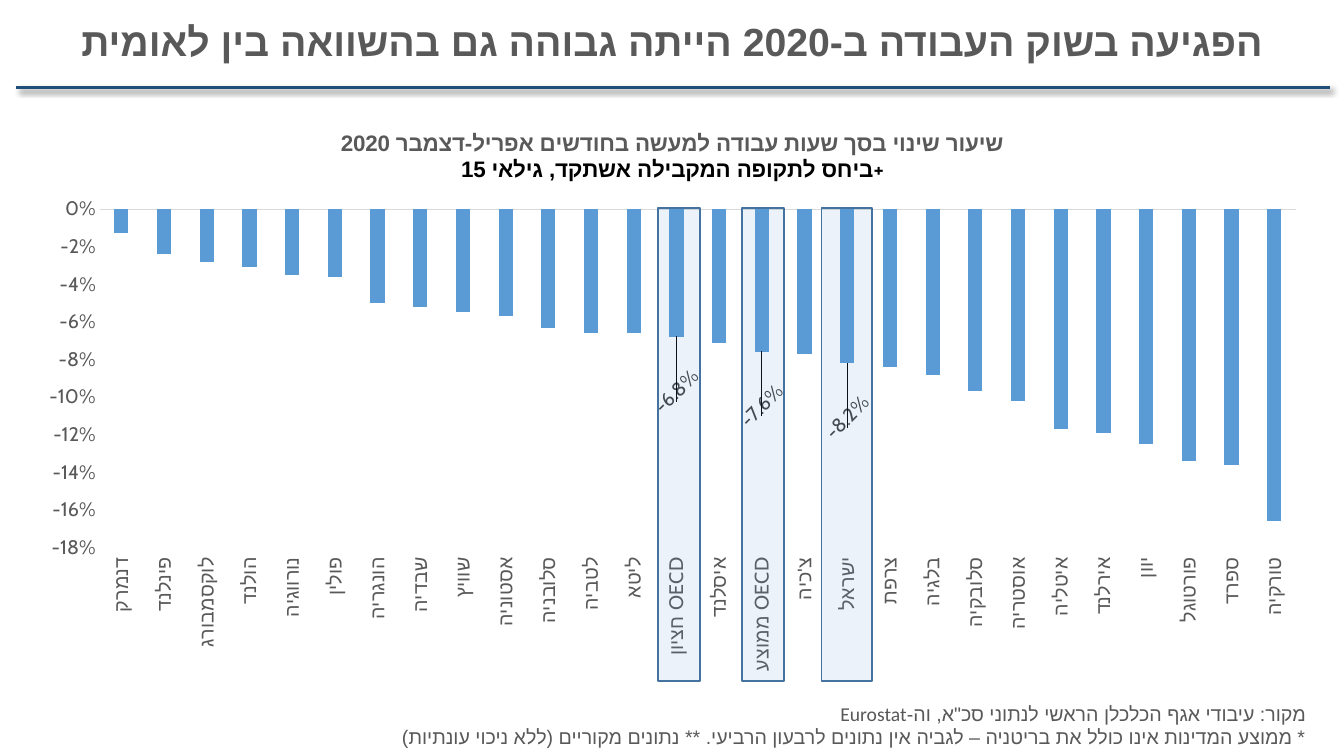
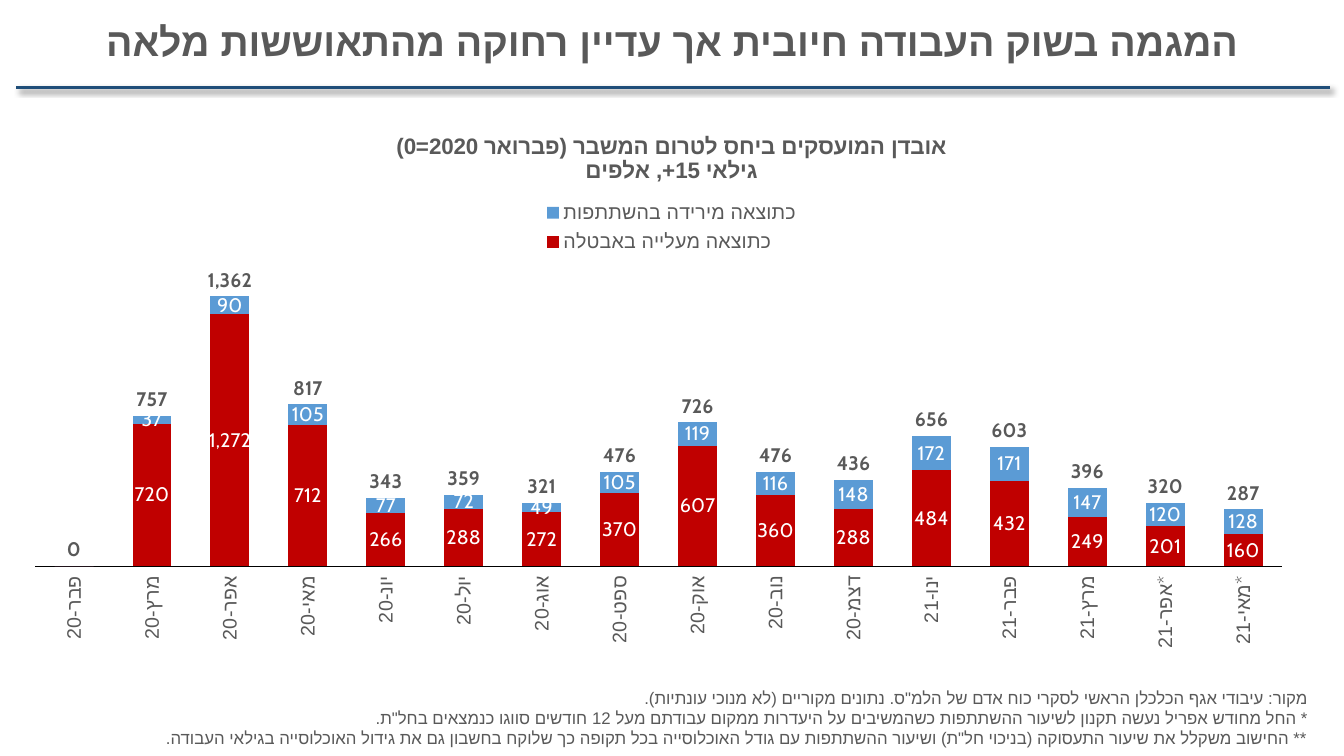
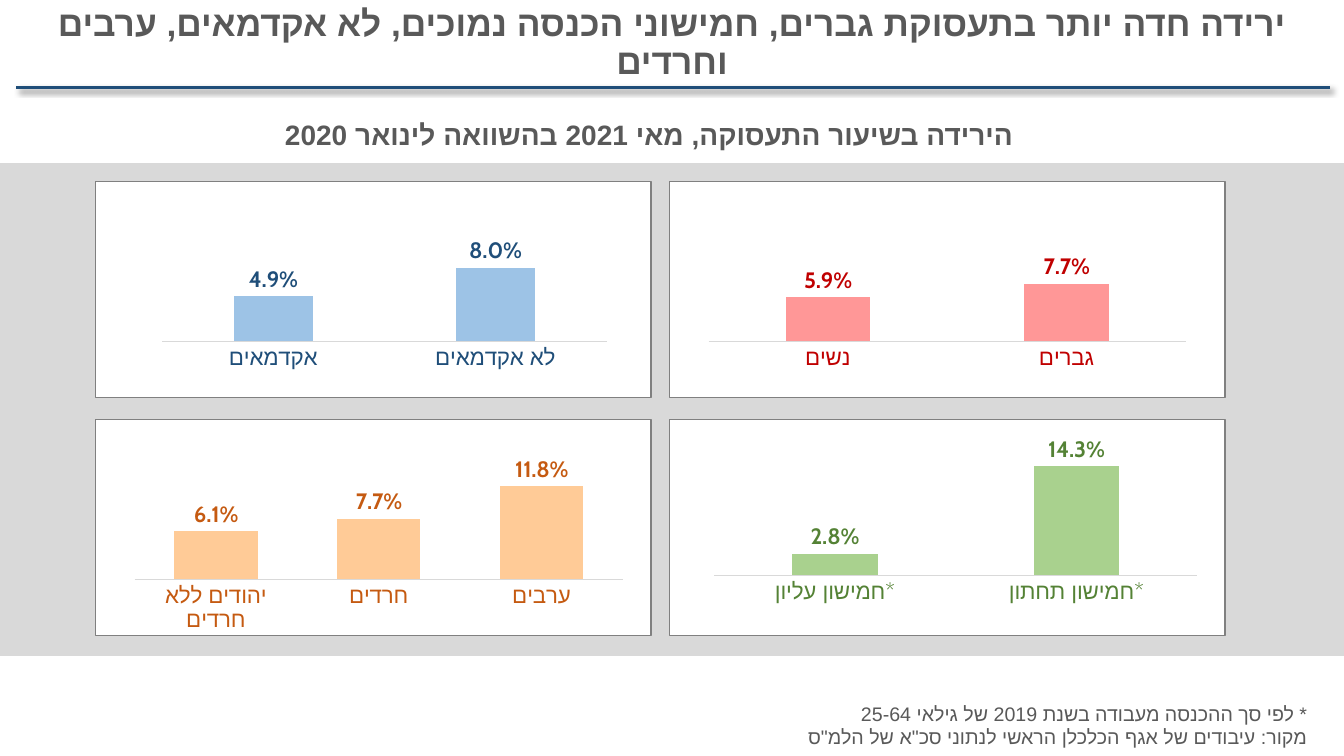
from copy import deepcopy

from lxml.etree import SubElement
from pptx import Presentation
from pptx.chart.data import CategoryChartData
from pptx.dml.color import RGBColor
from pptx.enum.chart import (XL_CHART_TYPE, XL_LABEL_POSITION, XL_LEGEND_POSITION,
                             XL_MARKER_STYLE, XL_TICK_LABEL_POSITION, XL_TICK_MARK)
from pptx.enum.shapes import MSO_CONNECTOR, MSO_SHAPE
from pptx.enum.text import MSO_ANCHOR, MSO_AUTO_SIZE, PP_ALIGN
from pptx.oxml import parse_xml
from pptx.oxml.ns import nsdecls, qn
from pptx.util import Pt

WIDE, HIGH = 960, 540
GREY, NAVY, BLUE, RED = "595959", "1F4E79", "5B9BD5", "C00000"
PALE, WHITE, BLACK = "D9D9D9", "FFFFFF", "000000"


def paint(text):
    """Turn a hex string into a colour."""
    return RGBColor.from_string(text)


def style(font, size, ink, bold=False, face="Cabin"):
    """Set size, colour, weight and faces of a font."""
    font.size, font.bold, font.name = Pt(size), bold, face
    font.color.rgb = paint(ink)
    SubElement(font._element, qn("a:cs")).set("typeface", "Arial")


def place(box):
    """Turn a box in points into lengths."""
    return [Pt(side) for side in box]


def write(frame, lines, size, align, **look):
    """Fill a text frame with right-to-left paragraphs."""
    frame.word_wrap = True
    frame.text = "\n".join(lines)
    for para in frame.paragraphs:
        para.alignment = align
        para._p.get_or_add_pPr().set("rtl", "1")
        for run in para.runs:
            style(run.font, size, GREY, **look)


def head(deck, text, size=28):
    """Add a slide with its rule and title."""
    slide = deck.slides.add_slide(deck.slide_layouts[5])
    rule = slide.shapes.add_connector(MSO_CONNECTOR.STRAIGHT, *place((949.7, 62.6, 11.5, 62.6)))
    rule.line.color.rgb, rule.line.width = paint(NAVY), Pt(2.25)
    rule._element.spPr.append(parse_xml(
        f'<a:effectLst {nsdecls("a")}><a:outerShdw blurRad="50800" dist="38100" dir="2700000" '
        f'algn="tl" rotWithShape="0"><a:srgbClr val="{BLACK}"><a:alpha val="40000"/></a:srgbClr>'
        '</a:outerShdw></a:effectLst>'))
    title = slide.shapes.title
    title.left, title.top, title.width, title.height = place((0, 0, WIDE, 62.6))
    frame = title.text_frame
    write(frame, [text], size, PP_ALIGN.CENTER, bold=True)
    frame.auto_size, frame.vertical_anchor = MSO_AUTO_SIZE.NONE, MSO_ANCHOR.MIDDLE
    frame.paragraphs[0].line_spacing = 0.9
    return slide


def label(slide, box, lines, size, align, **look):
    """Add a text box that grows with its text."""
    frame = slide.shapes.add_textbox(*place(box)).text_frame
    write(frame, lines, size, align, **look)
    frame.auto_size = MSO_AUTO_SIZE.SHAPE_TO_FIT_TEXT
    return frame


def note(slide, box, lines, size=14):
    """Add the source notes at the foot."""
    for para in label(slide, box, lines, size, PP_ALIGN.RIGHT, face="Calibri").paragraphs:
        para.level = 1
        para._p.pPr.set("marL", str(Pt(18)))
        para._p.pPr.set("indent", "0")


def block(slide, box, fill, line, alpha=None):
    """Add a plain rectangle, see-through if asked."""
    shape = slide.shapes.add_shape(MSO_SHAPE.RECTANGLE, *place(box))
    shape.shadow.inherit = False
    shape.fill.solid()
    shape.fill.fore_color.rgb = paint(fill)
    shape.line.color.rgb, shape.line.width = paint(line), Pt(1)
    if alpha:
        tint = shape._element.spPr.find(qn("a:solidFill"))[0]
        SubElement(tint, qn("a:alpha")).set("val", str(alpha * 1000))


def settle(node, spot, parts, inner=False):
    """Give a chart part a manual layout in fractions."""
    for old in node.findall(qn("c:layout")):
        node.remove(old)
    target = '<c:layoutTarget val="inner"/>' if inner else ""
    edges = '<c:xMode val="edge"/><c:yMode val="edge"/>' if len(parts) == 4 else ""
    sides = "".join(f'<c:{key} val="{part}"/>' for key, part in zip("xywh", parts))
    node.insert(spot, parse_xml(f'<c:layout {nsdecls("c")}><c:manualLayout>{target}{edges}{sides}'
                                '</c:manualLayout></c:layout>'))


def turn(node, angle):
    """Rotate the text of a chart part by degrees."""
    body = node.find(qn("c:txPr")).find(qn("a:bodyPr"))
    body.set("rot", str(angle * 60000))
    body.set("vert", "horz")


def graph(slide, box, cats, rows, kind, form, plot, gap, lap, scale, ink=GREY, size=14, line=PALE):
    """Add a column chart and set its plot and axes."""
    data = CategoryChartData(number_format=form)
    data.categories = cats
    for name, vals, _ in rows:
        data.add_series(name, vals)
    chart = slide.shapes.add_chart(kind, *place(box), data).chart
    style(chart.font, 14, BLACK)
    chart.has_title = chart.has_legend = False
    settle(chart._chartSpace.chart.plotArea, 0, plot, inner=True)
    bars = chart.plots[0]
    bars.gap_width, bars.overlap, bars.vary_by_categories = gap, lap, False
    for series, (_, _, fill) in zip(bars.series, rows):
        series.invert_if_negative = False
        series.format.fill.solid()
        series.format.fill.fore_color.rgb = paint(fill)
    cat, val = chart.category_axis, chart.value_axis
    for axis in (cat, val):
        axis.has_major_gridlines = False
        axis.major_tick_mark = axis.minor_tick_mark = XL_TICK_MARK.NONE
    cat.format.line.color.rgb, cat.format.line.width = paint(line), Pt(0.75)
    style(cat.tick_labels.font, size, ink)
    val.minimum_scale, val.maximum_scale = scale
    val.visible = False
    return chart


def name(chart, lines, inks, flow="0"):
    """Write the title of a chart."""
    frame = chart.chart_title.text_frame
    frame.text = "\n".join(lines)
    for para, ink in zip(frame.paragraphs, inks):
        para._p.get_or_add_pPr().set("rtl", flow)
        style(para.runs[0].font, 16, ink, True)


def tag(series, form, spot, size, ink, bold=False):
    """Show the values of a series."""
    labels = series.data_labels
    labels.show_value, labels.position = True, spot
    labels.number_format, labels.number_format_is_linked = form, False
    style(labels.font, size, ink, bold)
    return labels


def stand(chart):
    """Set the category names upright below the plot."""
    chart.category_axis.tick_label_position = XL_TICK_LABEL_POSITION.LOW
    turn(chart.category_axis._element, -90)


def lands(slide, box):
    """Chart the change in work hours by country."""
    left, top = box[:2]
    cats = ["דנמרק", "פינלנד", "לוקסמבורג", "הולנד", "נורווגיה", "פולין", "הונגריה", "שבדיה",
            "שוויץ", "אסטוניה", "סלובניה", "לטביה", "ליטא", "חציון OECD", "איסלנד", "ממוצע OECD",
            "צ'כיה", "ישראל", "צרפת", "בלגיה", "סלובקיה", "אוסטריה", "איטליה", "אירלנד", "יוון",
            "פורטוגל", "ספרד", "טורקיה"]
    vals = [-0.013, -0.024, -0.028, -0.031, -0.035, -0.036, -0.05, -0.052, -0.055, -0.057, -0.063,
            -0.066, -0.066, -0.068, -0.071, -0.076, -0.077, -0.082, -0.084, -0.088, -0.097, -0.102,
            -0.117, -0.119, -0.125, -0.134, -0.136, -0.166]
    chart = graph(slide, box, cats, [("שינוי", vals, BLUE)], XL_CHART_TYPE.COLUMN_CLUSTERED,
                  "0.0%", (0.05, 0.17, 0.94, 0.58), 200, -27, (-0.18, 0))
    name(chart, ["שיעור שינוי בסך שעות עבודה למעשה בחודשים אפריל-דצמבר 2020",
                 "ביחס לתקופה המקבילה אשתקד, גילאי 15+"], (GREY, BLACK))
    stand(chart)
    axis = chart.value_axis
    axis.visible, axis.major_unit = True, 0.02
    axis.format.line.fill.background()
    axis.tick_labels.number_format, axis.tick_labels.number_format_is_linked = "0%", False
    style(axis.tick_labels.font, 14, GREY)
    series = chart.plots[0].series[0]
    series.data_labels.show_value = False
    for spot in (13, 15, 17):
        mark = series.points[spot].data_label
        style(mark.font, 14, "404040")
        mark.position = XL_LABEL_POSITION.OUTSIDE_END
        node = mark._get_or_add_dLbl()
        turn(node, -45)
        settle(node, 1, (0, 0.04))
        node.insert(2, parse_xml(f'<c:numFmt {nsdecls("c")} formatCode="0.0%" sourceLinked="0"/>'))
    for shift, width in ((444, 30), (504, 30), (561, 36)):
        block(slide, (left + shift, top + 70, width, 338), BLUE, "43739E", 12)


def months(slide, box):
    """Chart the jobs lost by month, with totals above."""
    cats = ["פבר-20", "מרץ-20", "אפר-20", "מאי-20", "יונ-20", "יול-20", "אוג-20", "ספט-20",
            "אוק-20", "נוב-20", "דצמ-20", "ינו-21", "פבר-21", "מרץ-21", "אפר-21*", "מאי-21*"]
    rows = [("כתוצאה מעלייה באבטלה", [0, 720, 1272, 712, 266, 288, 272, 370, 607, 360, 288, 484,
                                       432, 249, 201, 160], RED),
            ("כתוצאה מירידה בהשתתפות", [0, 37, 90, 105, 77, 72, 49, 105, 119, 116, 148, 172,
                                         171, 147, 120, 128], BLUE),
            ("סך הכול", [0, 757, 1362, 817, 343, 359, 321, 476, 726, 476, 436, 656,
                         603, 396, 320, 287], "A5A5A5")]
    chart = graph(slide, box, cats, rows, XL_CHART_TYPE.COLUMN_STACKED, "#,##0",
                  (0.01, 0.25, 0.96, 0.58), 100, 100, (0, 1600), line=BLACK)
    name(chart, ["אובדן המועסקים ביחס לטרום המשבר (פברואר 2020=0)", "גילאי 15+, אלפים"],
         (GREY, GREY), "1")
    stand(chart)

    bars = chart._chartSpace.chart.plotArea.find(qn("c:barChart"))
    total = bars.findall(qn("c:ser"))[2]
    total.remove(total.find(qn("c:invertIfNegative")))
    line = parse_xml(f'<c:lineChart {nsdecls("c")}><c:grouping val="standard"/>'
                     '<c:varyColors val="0"/><c:marker val="1"/></c:lineChart>')
    line.insert(2, total)
    for axis in bars.findall(qn("c:axId")):
        line.append(deepcopy(axis))
    bars.addnext(line)

    for series in chart.plots[0].series:
        labels = tag(series, "#,##0", XL_LABEL_POSITION.CENTER, 14, WHITE)
        labels._element.insert(0, parse_xml(
            f'<c:dLbl {nsdecls("c")}><c:idx val="0"/><c:delete val="1"/></c:dLbl>'))
    sums = chart.plots[1].series[0]
    sums.smooth, sums.marker.style = False, XL_MARKER_STYLE.NONE
    sums.format.line.fill.background()
    tag(sums, "#,##0", XL_LABEL_POSITION.ABOVE, 14, GREY, True)

    chart.has_legend = True
    key = chart.legend
    key.position, key.include_in_layout = XL_LEGEND_POSITION.RIGHT, False
    style(key.font, 14, GREY)
    settle(key._element, 1, (0.4, 0.15, 0.2, 0.12))
    key._element.insert(1, parse_xml(
        f'<c:legendEntry {nsdecls("c")}><c:idx val="2"/><c:delete val="1"/></c:legendEntry>'))


def panel(slide, box, cats, vals, fill, ink, plot, gap=182):
    """Add one framed chart of a group comparison."""
    chart = graph(slide, box, cats, [("ירידה", vals, fill)], XL_CHART_TYPE.COLUMN_CLUSTERED,
                  "0.0%", plot, gap, 0, (0, 0.15), ink, 16)
    tag(chart.plots[0].series[0], "0.0%", XL_LABEL_POSITION.OUTSIDE_END, 16, ink, True)
    chart._chartSpace.chart.addnext(parse_xml(
        f'<c:spPr {nsdecls("c", "a")}><a:solidFill><a:srgbClr val="{WHITE}"/></a:solidFill>'
        f'<a:ln w="{Pt(0.75)}"><a:solidFill><a:srgbClr val="808080"/></a:solidFill></a:ln></c:spPr>'))


def groups(slide, box):
    """Lay out four panels in a grid on a grey band."""
    left, top = box[:2]
    block(slide, box, PALE, PALE)
    panels = [
        (["אקדמאים", "לא אקדמאים"], [0.049, 0.08], "9DC3E6", NAVY, (0.12, 0.1, 0.8, 0.64)),
        (["נשים", "גברים"], [0.059, 0.077], "FF9797", RED, (0.07, 0.22, 0.86, 0.52)),
        (["יהודים ללא חרדים", "חרדים", "ערבים"], [0.061, 0.077, 0.118], "FFCB97", "C55A11",
         (0.07, 0.19, 0.88, 0.55), 96),
        (["חמישון עליון*", "חמישון תחתון*"], [0.028, 0.143], "A9D18E", "548235",
         (0.08, 0.19, 0.87, 0.53))]
    for spot, parts in enumerate(panels):
        row, col = divmod(spot, 2)
        panel(slide, (left + 68 + 410 * col, top + 13 + 170 * row, 397.4, 154.8), *parts)


def main():
    """Build the three slides and save them."""
    deck = Presentation()
    deck.slide_width, deck.slide_height = Pt(WIDE), Pt(HIGH)

    slide = head(deck, "הפגיעה בשוק העבודה ב-2020 הייתה גבוהה גם בהשוואה בין לאומית")
    note(slide, (131, 497.5, 827.3, 41), [
        "מקור: עיבודי אגף הכלכלן הראשי לנתוני סכ\"א, וה-Eurostat",
        "* ממוצע המדינות אינו כולל את בריטניה – לגביה אין נתונים לרבעון הרביעי. "
        "** נתונים מקוריים (ללא ניכוי עונתיות)"])
    lands(slide, (26, 78.5, 908.6, 416.9))

    slide = head(deck, "המגמה בשוק העבודה חיובית אך עדיין רחוקה מהתאוששות מלאה")
    note(slide, (85, 487.4, 874.8, 51), [
        "מקור: עיבודי אגף הכלכלן הראשי לסקרי כוח אדם של הלמ\"ס. נתונים מקוריים (לא מנוכי עונתיות).",
        "* החל מחודש אפריל נעשה תקנון לשיעור ההשתתפות כשהמשיבים על היעדרות ממקום עבודתם "
        "מעל 12 חודשים סווגו כנמצאים בחל\"ת.",
        "** החישוב משקלל את שיעור התעסוקה (בניכוי חל\"ת) ושיעור ההשתתפות עם גודל האוכלוסייה "
        "בכל תקופה כך שלוקח בחשבון גם את גידול האוכלוסייה בגילאי העבודה."], 12)
    months(slide, (15.8, 80.6, 928, 390.2))

    slide = head(deck, "ירידה חדה יותר בתעסוקת גברים, חמישוני הכנסה נמוכים, "
                       "לא אקדמאים, ערבים וחרדים", 25.2)
    note(slide, (84.2, 497.5, 874.8, 41), [
        "* לפי סך ההכנסה מעבודה בשנת 2019 של גילאי 25-64",
        "מקור: עיבודים של אגף הכלכלן הראשי לנתוני סכ\"א של הלמ\"ס"])
    groups(slide, (0, 116.6, WIDE, 351.4))
    label(slide, (149, 80.6, 629.3, 31.7), ["הירידה בשיעור התעסוקה, מאי 2021 בהשוואה לינואר 2020"],
          20, PP_ALIGN.CENTER, bold=True)

    deck.save("out.pptx")


if __name__ == "__main__":
    main()
